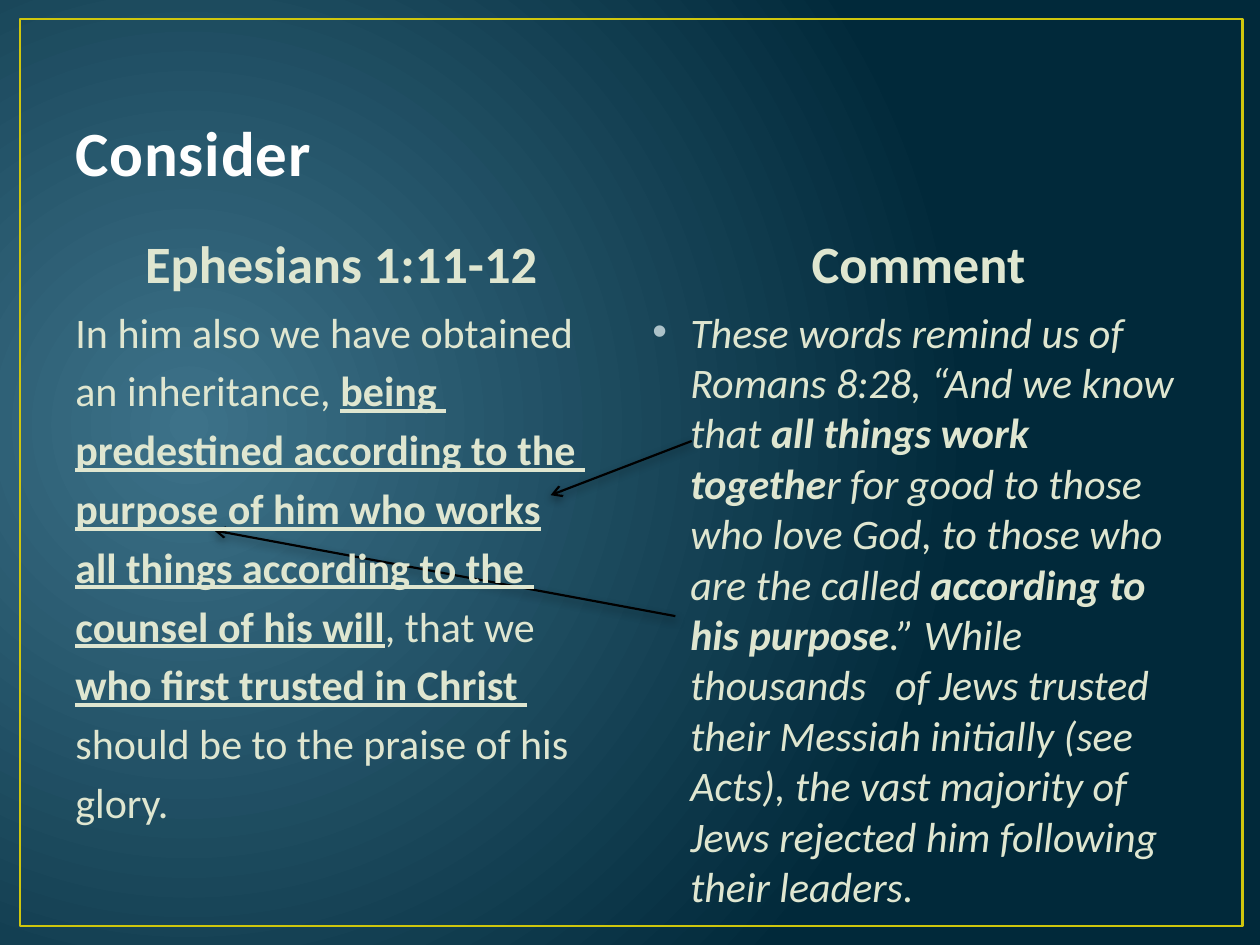
import pptx
import pptx.util
import pptx.dml.color
import pptx.enum.shapes
import pptx.enum.text
import pptx.oxml
import pptx.oxml.ns

Inches, Pt = pptx.util.Inches, pptx.util.Pt
RGBColor = pptx.dml.color.RGBColor
ALIGN, ANCHOR = pptx.enum.text.PP_ALIGN, pptx.enum.text.MSO_ANCHOR
qn = pptx.oxml.ns.qn

TEAL = RGBColor(0x3D, 0x72, 0x89)
NAVY = RGBColor(0x01, 0x29, 0x3A)
GOLD = RGBColor(0xCF, 0xC6, 0x0D)
WHITE = RGBColor(0xFE, 0xFE, 0xFE)
CREAM = RGBColor(0xDF, 0xE6, 0xD0)
BULLET = RGBColor(0xAC, 0xC2, 0xC9)
OUTLINE = RGBColor(0x38, 0x4F, 0x55)
BLACK = RGBColor(0, 0, 0)


def xml(markup):
    tag, rest = markup[1:].split(" ", 1)
    return pptx.oxml.parse_xml(f"<{tag} {pptx.oxml.ns.nsdecls('a')} {rest}")


def add_text(box, paragraphs, color, formats, anchor=ANCHOR.TOP, align=ALIGN.LEFT, before=0):
    """Add a text box; each paragraph is a list of (text, run formats)."""
    frame = slide.shapes.add_textbox(*map(Inches, box)).text_frame
    frame.word_wrap = True
    frame.vertical_anchor = anchor
    for index, runs in enumerate(paragraphs):
        paragraph = frame.paragraphs[0] if index == 0 else frame.add_paragraph()
        paragraph.alignment = align
        paragraph.space_before = Pt(before)
        for text, extra in runs:
            run = paragraph.add_run()
            run.text = text
            run.font.color.rgb = color
            for name, value in {"name": "Calibri", **formats, **extra}.items():
                setattr(run.font, name, value)
    return frame


presentation = pptx.Presentation()
presentation.slide_width, presentation.slide_height = Inches(10), Inches(7.5)
slide = presentation.slides.add_slide(presentation.slide_layouts[6])

# Radial background
backdrop = slide.background.fill
backdrop.gradient()
for stop, color, position in zip(backdrop.gradient_stops, (TEAL, NAVY), (0, 1)):
    stop.color.rgb = color
    stop.position = position
gradient = slide.background._cSld.find(".//" + qn("a:gradFill"))
gradient.replace(gradient.find(qn("a:lin")), xml(
    '<a:path path="circle"><a:fillToRect l="15000" t="50000" r="85000" b="60000"/></a:path>'))

# Gold frame
border = slide.shapes.add_shape(pptx.enum.shapes.MSO_SHAPE.RECTANGLE,
                                Inches(0.16), Inches(0.15), Inches(9.7), Inches(7.2))
border.shadow.inherit = False
border.fill.background()
border.line.color.rgb = GOLD
border.line.width = Pt(1.5)

# Arrows from the comment to the verse; the first lies behind the text
arrows = []
for x1, y1, x2, y2 in ((5.36, 4.89, 1.7, 4.21), (5.49, 3.5, 4.37, 3.93)):
    arrow = slide.shapes.add_connector(pptx.enum.shapes.MSO_CONNECTOR.STRAIGHT,
                                       Inches(x1), Inches(y1), Inches(x2), Inches(y2))
    arrow.line.color.rgb = BLACK
    arrow.line.width = Pt(1.25)
    arrow.line._get_or_add_ln().append(xml('<a:tailEnd type="arrow"/>'))
    arrow._element.spPr.append(xml(
        f'<a:effectLst ><a:outerShdw blurRad="{Pt(5)}" dist="{Pt(2)}" dir="5400000" rotWithShape="0">'
        f'<a:srgbClr val="{BLACK}"><a:alpha val="43000"/></a:srgbClr></a:outerShdw></a:effectLst>'))
    arrows.append(arrow)

# Title
title = add_text((0.5, 0.3, 9, 1.25), [[("Consider", {})]], WHITE,
                 {"size": Pt(36), "bold": True}, ANCHOR.BOTTOM)
title_format = title.paragraphs[0].runs[0].font._element
title_format.set("spc", "50")
title_format.insert(0, xml(
    f'<a:ln w="{Pt(1.05)}"><a:solidFill><a:srgbClr val="{OUTLINE}"/></a:solidFill></a:ln>'))

# Column headings
LEFT, RIGHT, COLUMN = 0.5, 5.08, 4.42
for left, heading in ((LEFT, "Ephesians 1:11-12"), (RIGHT, "Comment")):
    add_text((left, 1.68, COLUMN, 0.7), [[(heading, {})]], CREAM,
             {"size": Pt(30), "bold": True}, ANCHOR.BOTTOM, ALIGN.CENTER, 6)

# Verse, one paragraph to a line
stressed = {"bold": True, "underline": True}
verse = [
    [("In him also we have obtained", {})],
    [("an inheritance, ", {}), ("being ", stressed)],
    [("predestined according to the ", stressed)],
    [("purpose of him who works", stressed)],
    [("all things according to the ", stressed)],
    [("counsel of his will", stressed), (", that we", {})],
    [("who first trusted in Christ ", stressed)],
    [("should be to the praise of his", {})],
    [("glory.", {})],
]
verse_text = add_text((LEFT, 2.38, COLUMN, 4.32), verse, CREAM, {"size": Pt(24)}, before=4.8)

# Comment
bold = {"bold": True}
comment = [[
    ("These words remind us of Romans 8:28, “And we know that ", {}),
    ("all things work togethe", bold),
    ("r for good to those who love God, to those who are the called ", {}),
    ("according to his purpose", bold),
    (".” While thousands   of Jews trusted their Messiah initially (see Acts), "
     "the vast majority of Jews rejected him following their leaders.", {}),
]]
comment_text = add_text((RIGHT, 2.38, COLUMN, 4.32), comment, CREAM,
                        {"size": Pt(24), "italic": True}, before=4.8)

# Hanging indents, and the comment's bullet
for paragraph in (*verse_text.paragraphs, *comment_text.paragraphs):
    properties = paragraph._p.get_or_add_pPr()
    properties.set("marL", str(Inches(0.3)))
    properties.set("indent", str(Inches(-0.3)))
bullet = comment_text.paragraphs[0]._p.get_or_add_pPr()
for part in (f'<a:buClr ><a:srgbClr val="{BULLET}"/></a:buClr>',
             '<a:buFont typeface="Arial"/>', '<a:buChar char="•"/>'):
    bullet.append(xml(part))

# Bring the second arrow in front of the text
slide.shapes._spTree.append(arrows[1]._element)

presentation.save("out.pptx")
